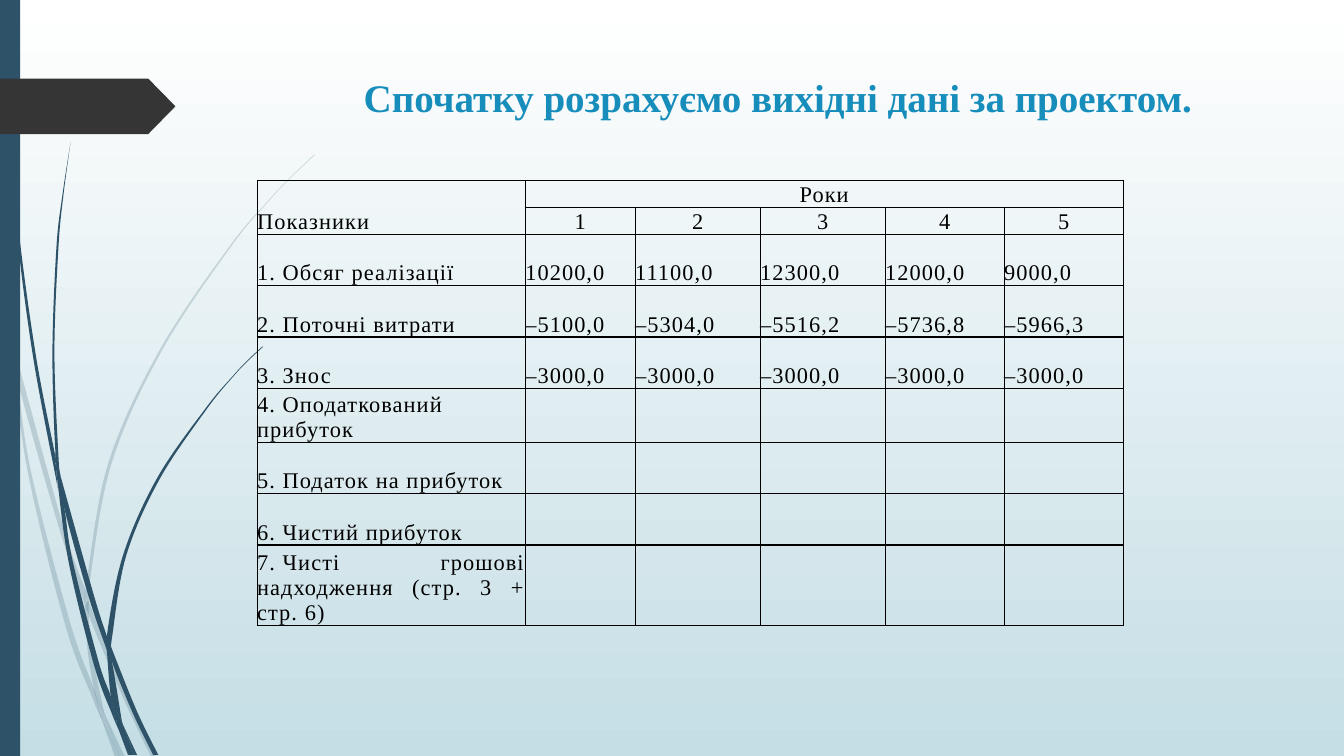
from dataclasses import dataclass

from lxml import etree
from pptx import Presentation
from pptx.dml.color import RGBColor
from pptx.enum.shapes import MSO_SHAPE
from pptx.enum.text import MSO_ANCHOR, PP_ALIGN
from pptx.oxml import parse_xml
from pptx.oxml.ns import nsdecls, qn
from pptx.util import Inches, Pt


@dataclass(frozen=True)
class Theme:
    stalk: RGBColor = RGBColor.from_string("2E5369")
    arrow: RGBColor = RGBColor.from_string("353535")
    title: RGBColor = RGBColor.from_string("178DBB")
    text: RGBColor = RGBColor.from_string("000000")
    sky_top: RGBColor = RGBColor.from_string("FFFFFF")
    sky_bottom: RGBColor = RGBColor.from_string("C5DEE5")
    font: str = "Times New Roman"
    title_size: float = 27.9
    table_size: float = 16


theme = Theme()


def paint(s, color):
    s.shadow.inherit = False
    s.fill.solid()
    s.fill.fore_color.rgb = color
    s.line.fill.background()


def bend(s, corner):
    """Turn the outline's lines into smooth curves, except the one that ends at the corner."""
    steps = list(s._element.iter(qn("a:moveTo"), qn("a:lnTo")))
    nodes = [(int(step[0].get("x")), int(step[0].get("y"))) for step in steps]
    for start, end in ((0, corner), (corner, len(nodes))):
        edge = nodes[start:end]
        padded = [edge[0], *edge, edge[-1]]
        for i, step in enumerate(steps[start + 1:end]):
            before, a, b, after = padded[i:i + 4]
            controls = [[p + (r - q) / 6 for p, q, r in zip(a, before, b)],
                        [p - (r - q) / 6 for p, q, r in zip(b, a, after)]]
            step.tag = qn("a:cubicBezTo")
            for k, (x, y) in enumerate(controls):
                step.insert(k, etree.Element(qn("a:pt"), x=str(round(x)), y=str(round(y))))


prs = Presentation()
prs.slide_width, prs.slide_height = Inches(13.33), Inches(7.5)
slide = prs.slides.add_slide(prs.slide_layouts[6])

sky = slide.background.fill
sky.gradient()
sky.gradient_angle = 270
for stop, color in zip(sky.gradient_stops, (theme.sky_top, theme.sky_bottom)):
    stop.color.rgb = color

# Each grass piece has two edges, one down and one back up
pale_grass = [
    ([(0, 2.82), (0.09, 3.22), (0.11, 3.5)], [(0.1, 3.44), (0, 2.99)]),
    ([(0.14, 3.45), (0.17, 3.76), (0.58, 5.22), (0.84, 5.99)], [(0.85, 5.86), (0.62, 5.2), (0.14, 3.45)]),
    ([(0.88, 5.96), (0.88, 6.1), (1.23, 6.94), (1.5, 7.51)], [(1.55, 7.51), (1.27, 6.92), (0.92, 6.07)]),
    ([(1.05, 7.11), (1.19, 7.51)], [(1.24, 7.51), (1.05, 7.11)]),
    ([(0.11, 3.5), (0.28, 4.7), (0.65, 6.21), (0.92, 6.93), (1.01, 7.14)],
     [(0.99, 7.07), (0.93, 6.83), (0.7, 6.19), (0.31, 4.69), (0.17, 3.76), (0.11, 3.5)]),
    ([(0.84, 5.99), (0.87, 6.46), (0.93, 6.83), (0.96, 6.92), (1.05, 7.11)],
     [(1.03, 7.06), (0.91, 6.46), (0.88, 6.1), (0.88, 6.08)]),
    ([(3.12, 1.53), (2.89, 1.75), (2.68, 1.97), (2.28, 2.44), (1.58, 3.48), (1.07, 4.61),
      (0.85, 5.84), (0.85, 5.86), (0.88, 5.96)],
     [(0.88, 5.84), (1.1, 4.62), (1.6, 3.49), (2.29, 2.45), (2.68, 1.98), (2.9, 1.75), (3.12, 1.54)]),
    ([(1.01, 7.14), (1.14, 7.51)], [(1.19, 7.51), (1.01, 7.14)]),
    ([(0.85, 5.86), (0.84, 5.99), (0.88, 6.08)], [(0.88, 6.1), (0.88, 5.96)]),
    ([(0.93, 6.83), (0.99, 7.07), (1.01, 7.14), (1.19, 7.51)], [(1.19, 7.51), (1.05, 7.11), (0.96, 6.92)]),
]
dark_grass = [
    ([(0.03, 0), (0.04, 0.48), (0.07, 1.1), (0.17, 2.33), (0.33, 3.55), (0.56, 4.77), (0.57, 4.81)],
     [(0.55, 4.57), (0.55, 4.53), (0.36, 3.55), (0.19, 2.32), (0.08, 1.09), (0.05, 0.48), (0.04, 0)]),
    ([(0.6, 4.72), (0.64, 5.05), (0.88, 5.92), (1.06, 6.45)], [(1.06, 6.31), (0.93, 5.9), (0.6, 4.72)]),
    ([(1.1, 6.41), (1.11, 6.56), (1.32, 7.08), (1.52, 7.49)], [(1.57, 7.49), (1.36, 7.06), (1.13, 6.49)]),
    ([(0.57, 4.77), (0.68, 5.57), (0.93, 6.59), (1.11, 7.08), (1.17, 7.22)],
     [(1.16, 7.17), (1.1, 6.91), (0.98, 6.57), (0.72, 5.56), (0.64, 5.05), (0.57, 4.77)]),
    ([(0.7, 1.41), (0.62, 1.93), (0.56, 2.45), (0.52, 3.49), (0.55, 4.49), (0.6, 4.72)],
     [(0.6, 4.72), (0.58, 4.53), (0.54, 3.49), (0.58, 2.45), (0.63, 1.93), (0.7, 1.41)]),
    ([(1.22, 7.19), (1.33, 7.49)], [(1.36, 7.49), (1.22, 7.19)]),
    ([(0.55, 4.49), (0.55, 4.53), (0.57, 4.77), (0.64, 5.05)], [(0.6, 4.72), (0.55, 4.49)]),
    ([(2.6, 3.44), (2.45, 3.58), (2.31, 3.73), (2.04, 4.05), (1.56, 4.74), (1.22, 5.51),
      (1.06, 6.31), (1.1, 6.41)],
     [(1.11, 6.33), (1.25, 5.52), (1.58, 4.76), (2.05, 4.06), (2.31, 3.74), (2.45, 3.59), (2.61, 3.44)]),
    ([(1.17, 7.22), (1.27, 7.49)], [(1.31, 7.49), (1.17, 7.22)]),
    ([(1.06, 6.45), (1.1, 6.91), (1.16, 7.06), (1.22, 7.19)], [(1.21, 7.16), (1.11, 6.56), (1.06, 6.45)]),
    ([(1.06, 6.31), (1.06, 6.45), (1.11, 6.56)], [(1.1, 6.41), (1.06, 6.31)]),
    ([(1.1, 6.91), (1.16, 7.17), (1.17, 7.22), (1.3, 7.49)], [(1.33, 7.49), (1.22, 7.19), (1.16, 7.06)]),
]
for grass, opacity in ((pale_grass, 20), (dark_grass, 100)):
    for down, up in grass:
        outline = [(Inches(x), Inches(y)) for x, y in down + up]
        builder = slide.shapes.build_freeform(*outline[0])
        builder.add_line_segments(outline[1:], close=True)
        s = builder.convert_to_shape()
        bend(s, len(down))
        paint(s, theme.stalk)
        if opacity < 100:
            srgb = s._element.spPr.find(qn("a:solidFill"))[0]
            etree.SubElement(srgb, qn("a:alpha"), val=str(opacity * 1000))

bar = slide.shapes.add_shape(MSO_SHAPE.RECTANGLE, 0, 0, Inches(0.2), Inches(7.5))
paint(bar, theme.stalk)
arrow = slide.shapes.add_shape(MSO_SHAPE.PENTAGON, 0, Inches(0.78), Inches(1.74), Inches(0.55))
arrow.adjustments[0] = 0.49
paint(arrow, theme.arrow)

title = slide.shapes.add_textbox(Inches(2.84), Inches(0.68), Inches(9.75), Inches(0.77))
tf = title.text_frame
tf.word_wrap = True
p = tf.paragraphs[0]
p.text = "Спочатку розрахуємо вихідні дані за проектом."
p.alignment = PP_ALIGN.CENTER
p.font.name, p.font.size, p.font.bold = theme.font, Pt(theme.title_size), True
p.font.color.rgb = theme.title

rows = [
    ["Показники", "Роки"],
    ["", "1", "2", "3", "4", "5"],
    ["1. Обсяг реалізації", "10200,0", "11100,0", "12300,0", "12000,0", "9000,0"],
    ["2. Поточні витрати", "–5100,0", "–5304,0", "–5516,2", "–5736,8", "–5966,3"],
    ["3. Знос"] + ["–3000,0"] * 5,
    ["4. Оподаткований прибуток"],
    ["5. Податок на прибуток"],
    ["6. Чистий прибуток"],
    ["7. Чисті грошові надходження (стр. 3 + стр. 6)"],
]
no_break_space = chr(160)
col_widths = [2.66, 1.09, 1.24, 1.24, 1.18, 1.18]
row_heights = [0.25] * 2 + [0.51] * 6 + [0.76]
table = slide.shapes.add_table(len(rows), len(col_widths), Inches(2.55), Inches(1.79),
                               Inches(sum(col_widths)), Inches(sum(row_heights))).table
table.first_row = table.horz_banding = False
for col, width in zip(table.columns, col_widths):
    col.width = Inches(width)
for row, height in zip(table.rows, row_heights):
    row.height = Inches(height)
table.cell(0, 0).merge(table.cell(1, 0))
table.cell(0, 1).merge(table.cell(0, 5))

for i, row in enumerate(table.rows):
    for j, cell in enumerate(row.cells):
        cell.margin_left = cell.margin_right = cell.margin_top = cell.margin_bottom = 0
        cell.vertical_anchor = MSO_ANCHOR.BOTTOM
        cell.fill.background()
        tcPr = cell._tc.get_or_add_tcPr()
        for k, side in enumerate("LRTB"):
            tcPr.insert(k, parse_xml(
                f'<a:ln{side} {nsdecls("a")} w="12700"><a:solidFill>'
                f'<a:srgbClr val="{theme.text}"/></a:solidFill></a:ln{side}>'))
        p = cell.text_frame.paragraphs[0]
        p.alignment = PP_ALIGN.CENTER if i < 2 and j > 0 else PP_ALIGN.JUSTIFY
        if j < len(rows[i]) and rows[i][j]:
            r = p.add_run()
            r.text = rows[i][j].replace(". ", "." + no_break_space, 1)
            r.font.name, r.font.size = theme.font, Pt(theme.table_size)
            r.font.color.rgb = theme.text
            r.font._element.set("spc", "80")

prs.save("out.pptx")
